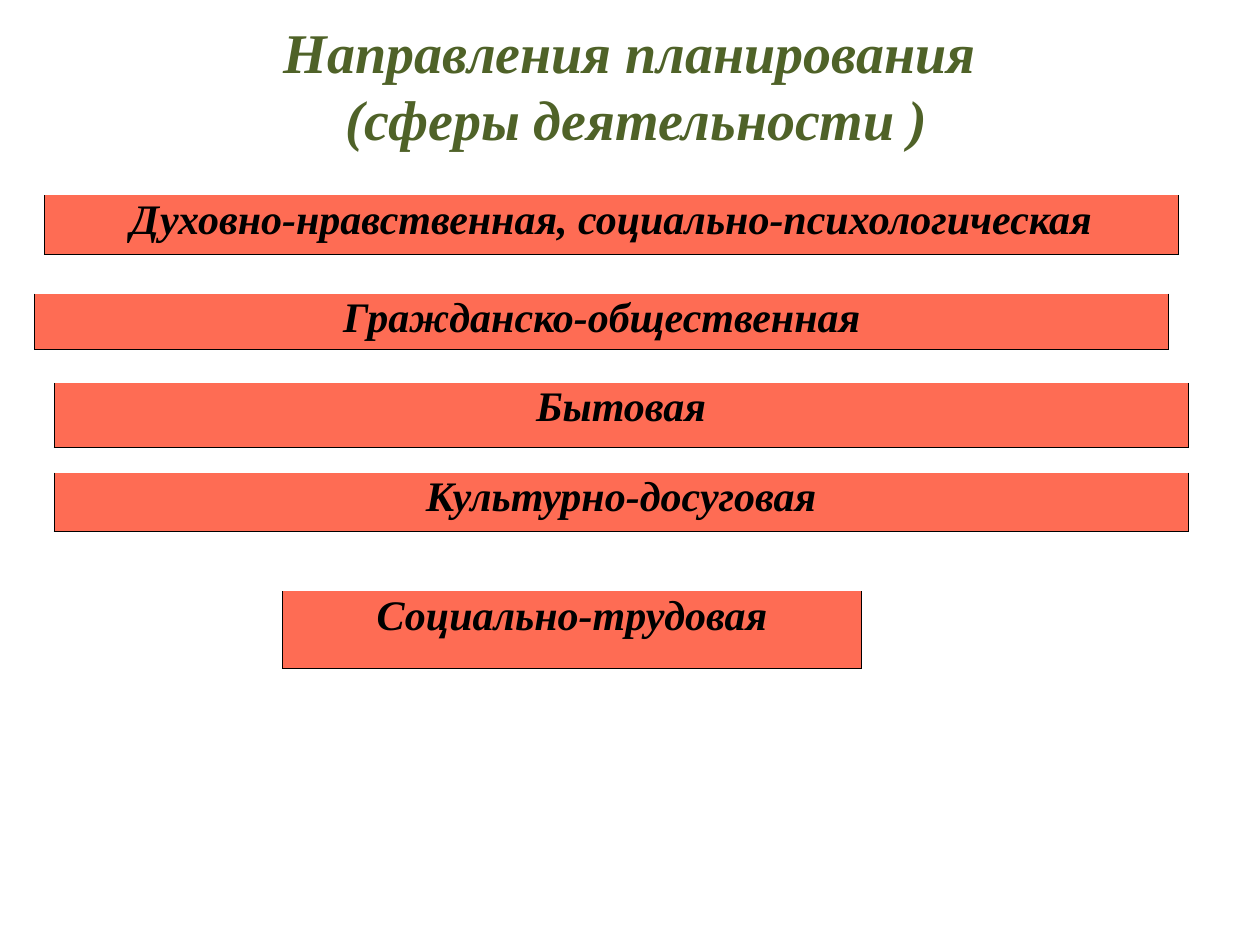
"""Build a slide listing the areas of activity covered by planning."""
from dataclasses import dataclass

import lxml.etree
import pptx
import pptx.dml.color
import pptx.enum.text
import pptx.oxml.ns
import pptx.util

Cm = pptx.util.Cm
Pt = pptx.util.Pt


@dataclass(frozen=True)
class Theme:
    font: str = "Times New Roman"
    title_color: str = "4F6228"
    text_color: str = "000000"
    bar_color: str = "FE6C54"
    border_color: str = "000000"
    title_size: int = 32
    bar_size: int = 24
    border_width: float = 0.5


@dataclass(frozen=True)
class Bar:
    text: str
    left: float
    top: float
    height: float
    width: float = 22.86


THEME = Theme()
TITLE = "Направления планирования\v (сферы деятельности )"
BARS = (
    Bar("Духовно-нравственная, социально-психологическая", 0.89, 3.94, 1.19),
    Bar("Гражданско-общественная", 0.7, 5.92, 1.12),
    Bar("Бытовая", 1.09, 7.72, 1.3),
    Bar("Культурно-досуговая", 1.09, 9.53, 1.19),
    Bar("Социально-трудовая", 5.69, 11.92, 1.55, 11.68),
)


def set_values(target: object, values: dict) -> None:
    for name, value in values.items():
        setattr(target, name, value)


def format_paragraph(paragraph, size: int, color: str) -> None:
    paragraph.alignment = pptx.enum.text.PP_ALIGN.CENTER
    for run in paragraph.runs:
        set_values(run.font, {"name": THEME.font, "size": Pt(size), "bold": True, "italic": True})
        run.font.color.rgb = pptx.dml.color.RGBColor.from_string(color)


def add_borders(cell) -> None:
    qn = pptx.oxml.ns.qn
    properties = cell._tc.get_or_add_tcPr()
    for side in "LRTB":
        line = lxml.etree.SubElement(properties, qn(f"a:ln{side}"), w=str(Pt(THEME.border_width)))
        if side == "T":
            lxml.etree.SubElement(line, qn("a:noFill"))
        else:
            fill = lxml.etree.SubElement(line, qn("a:solidFill"))
            lxml.etree.SubElement(fill, qn("a:srgbClr"), val=THEME.border_color)


def add_bar(slide, bar: Bar) -> None:
    box = (Cm(value) for value in (bar.left, bar.top, bar.width, bar.height))
    table = slide.shapes.add_table(1, 1, *box).table
    set_values(table, {"first_row": False, "horz_banding": False})
    cell = table.cell(0, 0)
    set_values(cell, {
        "text": bar.text,
        "margin_left": Cm(0.03),
        "margin_right": Cm(0.03),
        "margin_top": Cm(0.03),
        "margin_bottom": 0,
    })
    add_borders(cell)
    cell.fill.solid()
    cell.fill.fore_color.rgb = pptx.dml.color.RGBColor.from_string(THEME.bar_color)
    format_paragraph(cell.text_frame.paragraphs[0], THEME.bar_size, THEME.text_color)


def add_title(slide) -> None:
    title = slide.shapes.title
    set_values(title, {"left": Cm(1.27), "top": Cm(0.76), "width": Cm(22.86), "height": Cm(3.18)})
    set_values(title.text_frame, {
        "text": TITLE,
        "word_wrap": True,
        "auto_size": pptx.enum.text.MSO_AUTO_SIZE.NONE,
        "vertical_anchor": pptx.enum.text.MSO_ANCHOR.MIDDLE,
        "margin_bottom": Cm(1.42),
    })
    format_paragraph(title.text_frame.paragraphs[0], THEME.title_size, THEME.title_color)


def main() -> None:
    presentation = pptx.Presentation()
    set_values(presentation, {"slide_width": Cm(25.4), "slide_height": Cm(19.05)})
    slide = presentation.slides.add_slide(presentation.slide_layouts.get_by_name("Title Only"))
    add_title(slide)
    for bar in BARS:
        add_bar(slide, bar)
    presentation.save("out.pptx")


if __name__ == "__main__":
    main()
